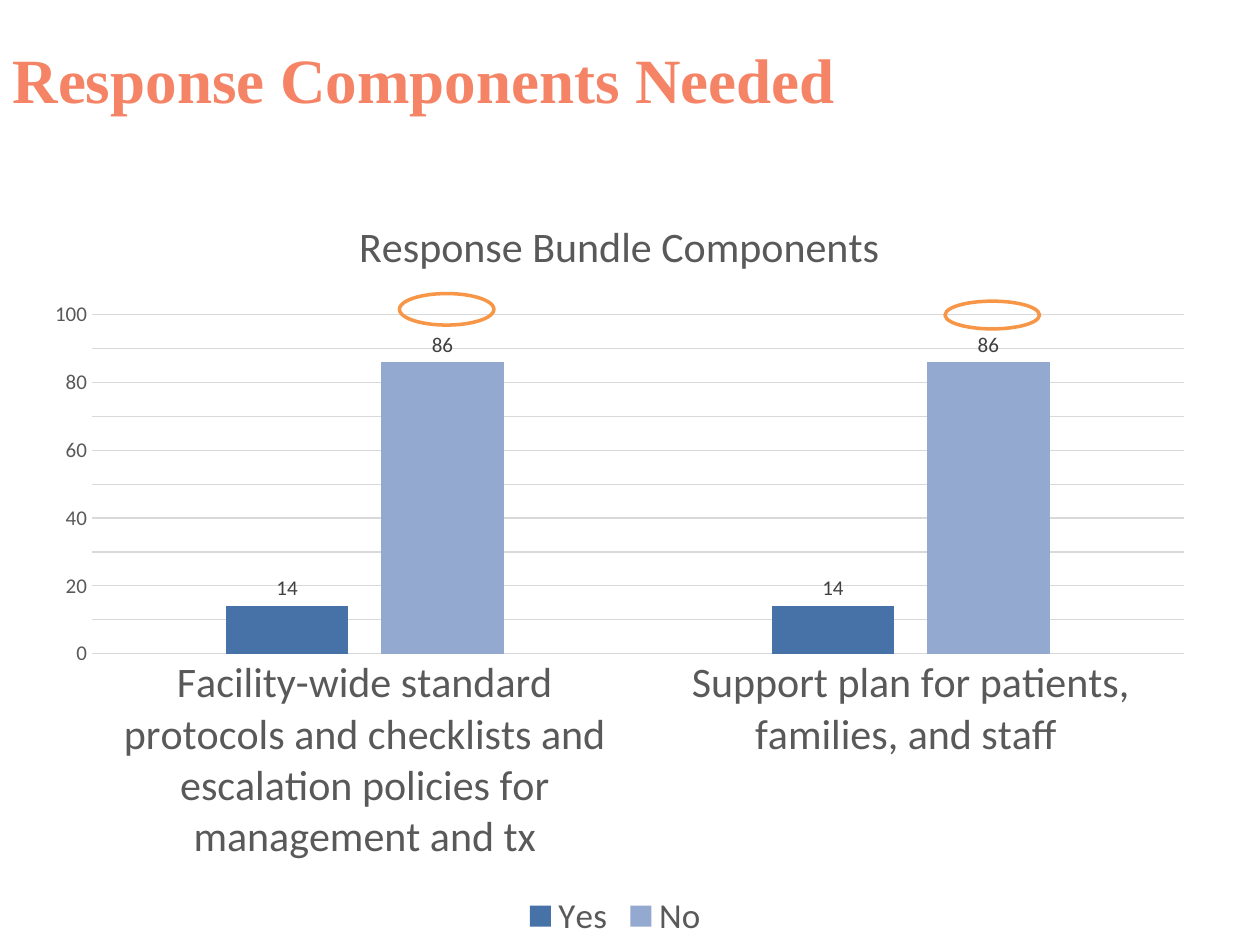
from copy import deepcopy
from dataclasses import dataclass

from pptx import Presentation
from pptx.chart.data import CategoryChartData
from pptx.dml.color import RGBColor
from pptx.enum import chart as ch, shapes, text
from pptx.oxml.ns import qn
from pptx.util import Inches, Pt


@dataclass(frozen=True)
class Theme:
    heading: str = "F58466"
    label: str = "595959"
    value: str = "404040"
    grid: str = "D9D9D9"
    ring: str = "F79646"
    bars: tuple = ("4672A8", "93A9CF")
    heading_font: str = "Times New Roman"
    chart_font: str = "Calibri"
    heading_size: int = 36
    large: int = 24
    legend: int = 20
    small: int = 12
    base: int = 10


theme = Theme()


def style_font(font, size, color, name=theme.chart_font, bold=False):
    font.name, font.size, font.bold = name, Pt(size), bold
    font.color.rgb = RGBColor.from_string(color)


def style_line(line, color, width):
    line.color.rgb = RGBColor.from_string(color)
    line.width = Pt(width)


prs = Presentation()
prs.slide_width, prs.slide_height = Inches(10), Inches(7.5)
s = prs.slides.add_slide(prs.slide_layouts[5])

# Title
title = s.shapes.title
title.left, title.top = Inches(0), Inches(0)
title.width, title.height = Inches(9), Inches(1.25)
tf = title.text_frame
tf.text = "Response Components Needed"
tf.vertical_anchor = text.MSO_ANCHOR.MIDDLE
p = tf.paragraphs[0]
p.alignment = text.PP_ALIGN.LEFT
style_font(p.font, theme.heading_size, theme.heading, theme.heading_font, True)

# Chart
data = CategoryChartData()
data.categories = [
    "Facility-wide standard protocols and checklists and escalation policies for management and tx",
    "Support plan for patients, families, and staff ",
]
data.add_series("Yes", (14, 14))
data.add_series("No ", (86, 86))
chart = s.shapes.add_chart(
    ch.XL_CHART_TYPE.COLUMN_CLUSTERED,
    Inches(0.25), Inches(1.5), Inches(9.33), Inches(6), data,
).chart
chart.font.name, chart.font.size = theme.chart_font, Pt(theme.base)

chart.has_title = True
chart.chart_title.include_in_layout = False
tf = chart.chart_title.text_frame
tf.text = "Response Bundle Components"
style_font(tf.paragraphs[0].font, theme.large, theme.label)

chart.has_legend = True
chart.legend.position = ch.XL_LEGEND_POSITION.BOTTOM
chart.legend.include_in_layout = False
style_font(chart.legend.font, theme.legend, theme.label)

cat_axis, val_axis = chart.category_axis, chart.value_axis
for axis, size in ((cat_axis, theme.large), (val_axis, theme.small)):
    axis.major_tick_mark = axis.minor_tick_mark = ch.XL_TICK_MARK.NONE
    style_font(axis.tick_labels.font, size, theme.label)
style_line(cat_axis.format.line, theme.grid, 0.75)
val_axis.format.line.fill.background()
val_axis.minimum_scale, val_axis.maximum_scale = 0, 100
val_axis.major_unit, val_axis.minor_unit = 20, 10
val_axis.has_major_gridlines = val_axis.has_minor_gridlines = True
style_line(val_axis.major_gridlines.format.line, theme.grid, 0.75)

# Minor gridlines take the format of the major ones
ax = val_axis._element
major, minor = (ax.find(qn(f"c:{kind}Gridlines")) for kind in ("major", "minor"))
minor.append(deepcopy(major.find(qn("c:spPr"))))

plot = chart.plots[0]
plot.vary_by_categories = False
plot.gap_width, plot.overlap = 219, -27
for series, color in zip(plot.series, theme.bars):
    series.format.fill.solid()
    series.format.fill.fore_color.rgb = RGBColor.from_string(color)
    labels = series.data_labels
    labels.show_value = True
    labels.position = ch.XL_LABEL_POSITION.OUTSIDE_END
    style_font(labels.font, theme.small, theme.value)

# Rings marking the "No" values
for left, top, height in ((3.17, 2.33, 0.25), (7.5, 2.39, 0.22)):
    ring = s.shapes.add_shape(
        shapes.MSO_SHAPE.OVAL, Inches(left), Inches(top), Inches(0.75), Inches(height))
    ring.shadow.inherit = False
    ring.fill.background()
    style_line(ring.line, theme.ring, 2)

prs.save("out.pptx")
